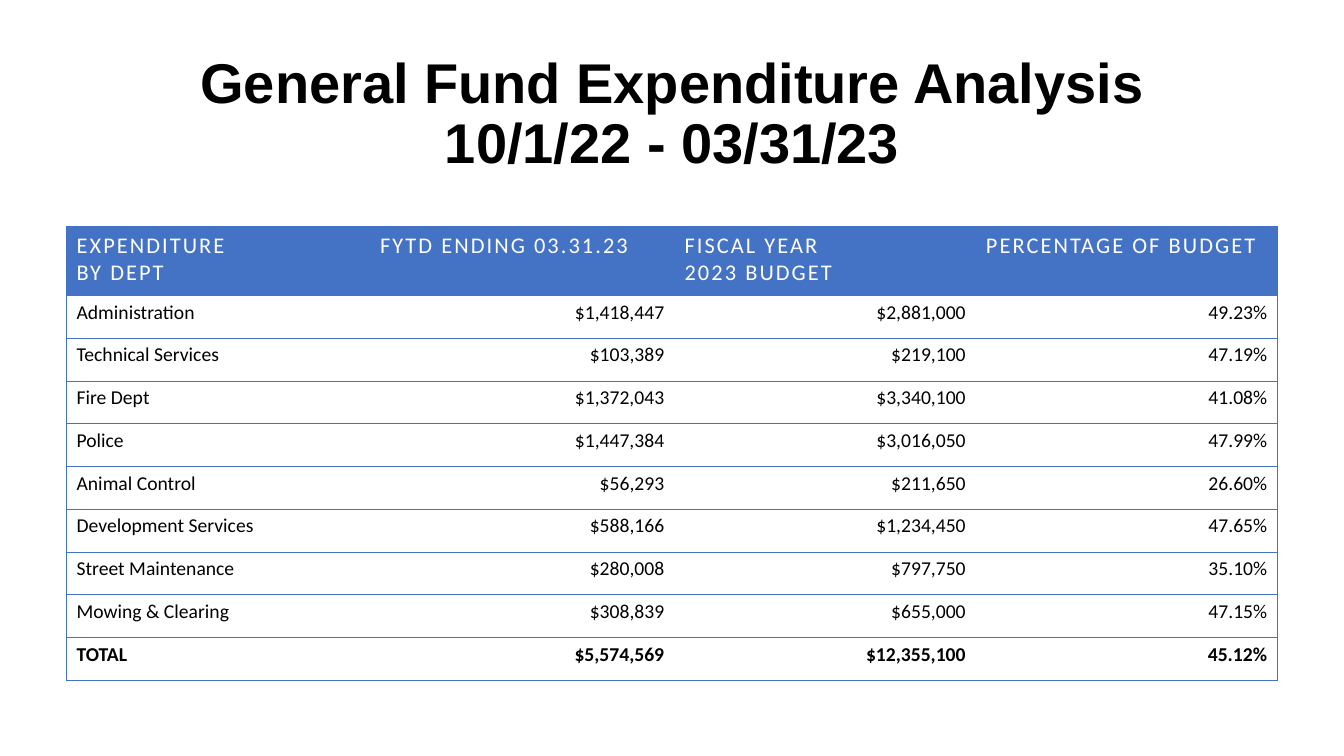
from dataclasses import dataclass

from lxml.etree import SubElement
from pptx import Presentation
from pptx.dml.color import RGBColor
from pptx.enum.text import MSO_ANCHOR, PP_ALIGN
from pptx.oxml.ns import qn
from pptx.slide import Slide
from pptx.table import Table, _Cell as Cell
from pptx.text.text import _Paragraph as Paragraph, _Run as Run
from pptx.util import Inches, Pt

COLORS = {"accent": "4472C4", "text": "000000", "paper": "FFFFFF"}
TITLE_LINES = ["General Fund Expenditure Analysis", "10/1/22 - 03/31/23"]
HEADERS = [
    ["EXPENDITURE", "BY DEPT"],
    ["FYTD ENDING 03.31.23"],
    ["FISCAL YEAR", "2023 BUDGET"],
    ["PERCENTAGE OF BUDGET"],
]
LEFT, WIDTH = 0.66, 12.01
TABLE_TOP, TABLE_HEIGHT, HEADER_HEIGHT = 2.25, 4.5, 0.68
COLUMN_WIDTHS = [3.01, 3.02, 2.99, 2.99]
BORDER_WIDTH = 0.5


@dataclass(frozen=True)
class Expenditure:
    department: str
    spent: str
    budget: str
    percentage: str


@dataclass(frozen=True)
class TextStyle:
    size: float
    color: str
    font: str = "Calibri"
    bold: bool = False
    spacing: float = 0


TITLE_STYLE = TextStyle(40, "text", font="Arial", bold=True)
HEADER_STYLE = TextStyle(16, "paper", spacing=1.5)
BODY_STYLE = TextStyle(14, "text")
TOTAL_STYLE = TextStyle(14, "text", bold=True)

EXPENDITURES = [
    Expenditure("Administration", "$1,418,447", "$2,881,000", "49.23%"),
    Expenditure("Technical Services", "$103,389", "$219,100", "47.19%"),
    Expenditure("Fire Dept", "$1,372,043", "$3,340,100", "41.08%"),
    Expenditure("Police", "$1,447,384", "$3,016,050", "47.99%"),
    Expenditure("Animal Control", "$56,293", "$211,650", "26.60%"),
    Expenditure("Development Services", "$588,166", "$1,234,450", "47.65%"),
    Expenditure("Street Maintenance", "$280,008", "$797,750", "35.10%"),
    Expenditure("Mowing & Clearing", "$308,839", "$655,000", "47.15%"),
    Expenditure("TOTAL", "$5,574,569", "$12,355,100", "45.12%"),
]


def add_run(paragraph: Paragraph, text: str, style: TextStyle) -> Run:
    run = paragraph.add_run()
    run.text = text
    run.font.name = style.font
    run.font.size = Pt(style.size)
    run.font.bold = style.bold
    run.font.color.rgb = RGBColor.from_string(COLORS[style.color])
    if style.spacing:
        run.font._element.set("spc", str(int(style.spacing * 100)))
    return run


def set_borders(cell: Cell, sides: str) -> None:
    """Draw the sides named by letter (L, R, T, B) and clear the others."""
    properties = cell._tc.get_or_add_tcPr()
    for side in "LRTB":
        line = SubElement(properties, qn(f"a:ln{side}"), w=str(Pt(BORDER_WIDTH)))
        if side in sides:
            fill = SubElement(line, qn("a:solidFill"))
            SubElement(fill, qn("a:srgbClr"), val=COLORS["accent"])
        else:
            SubElement(line, qn("a:noFill"))


def fill_cell(table: Table, row: int, column: int, lines: list[str], style: TextStyle) -> None:
    cell = table.cell(row, column)
    last_column = len(COLUMN_WIDTHS) - 1
    sides = "TB" + ("L" if column == 0 else "") + ("R" if column == last_column else "")
    set_borders(cell, sides)
    cell.fill.solid()
    cell.fill.fore_color.rgb = RGBColor.from_string(COLORS["accent" if row == 0 else "paper"])
    cell.vertical_anchor = MSO_ANCHOR.TOP
    frame = cell.text_frame
    for index, line in enumerate(lines):
        paragraph = frame.add_paragraph() if index else frame.paragraphs[0]
        paragraph.alignment = PP_ALIGN.RIGHT if row and column else PP_ALIGN.LEFT
        add_run(paragraph, line, style)


def add_title(slide: Slide) -> None:
    title = slide.shapes.title
    title.left, title.top = Inches(LEFT), Inches(0.35)
    title.width, title.height = Inches(WIDTH), Inches(1.59)
    frame = title.text_frame
    frame.word_wrap = True
    frame.vertical_anchor = MSO_ANCHOR.MIDDLE
    paragraph = frame.paragraphs[0]
    paragraph.alignment = PP_ALIGN.CENTER
    paragraph.line_spacing = 0.9
    for index, line in enumerate(TITLE_LINES):
        if index:
            paragraph.add_line_break()
        add_run(paragraph, line, TITLE_STYLE)


def add_expenditure_table(slide: Slide) -> None:
    table = slide.shapes.add_table(
        len(EXPENDITURES) + 1, len(HEADERS),
        Inches(LEFT), Inches(TABLE_TOP), Inches(WIDTH), Inches(TABLE_HEIGHT),
    ).table
    table.first_row = False
    table.horz_banding = False
    for column, width in zip(table.columns, COLUMN_WIDTHS):
        column.width = Inches(width)
    body_height = (TABLE_HEIGHT - HEADER_HEIGHT) / len(EXPENDITURES)
    for index, row in enumerate(table.rows):
        row.height = Inches(body_height if index else HEADER_HEIGHT)

    for column, lines in enumerate(HEADERS):
        fill_cell(table, 0, column, lines, HEADER_STYLE)
    for row, item in enumerate(EXPENDITURES, start=1):
        style = TOTAL_STYLE if row == len(EXPENDITURES) else BODY_STYLE
        values = [item.department, item.spent, item.budget, item.percentage]
        for column, value in enumerate(values):
            fill_cell(table, row, column, [value], style)


def main() -> None:
    presentation = Presentation()
    presentation.slide_width = Inches(13.33)
    presentation.slide_height = Inches(7.5)
    title_only = presentation.slide_layouts[5]
    slide = presentation.slides.add_slide(title_only)
    add_title(slide)
    add_expenditure_table(slide)
    presentation.save("out.pptx")


if __name__ == "__main__":
    main()
